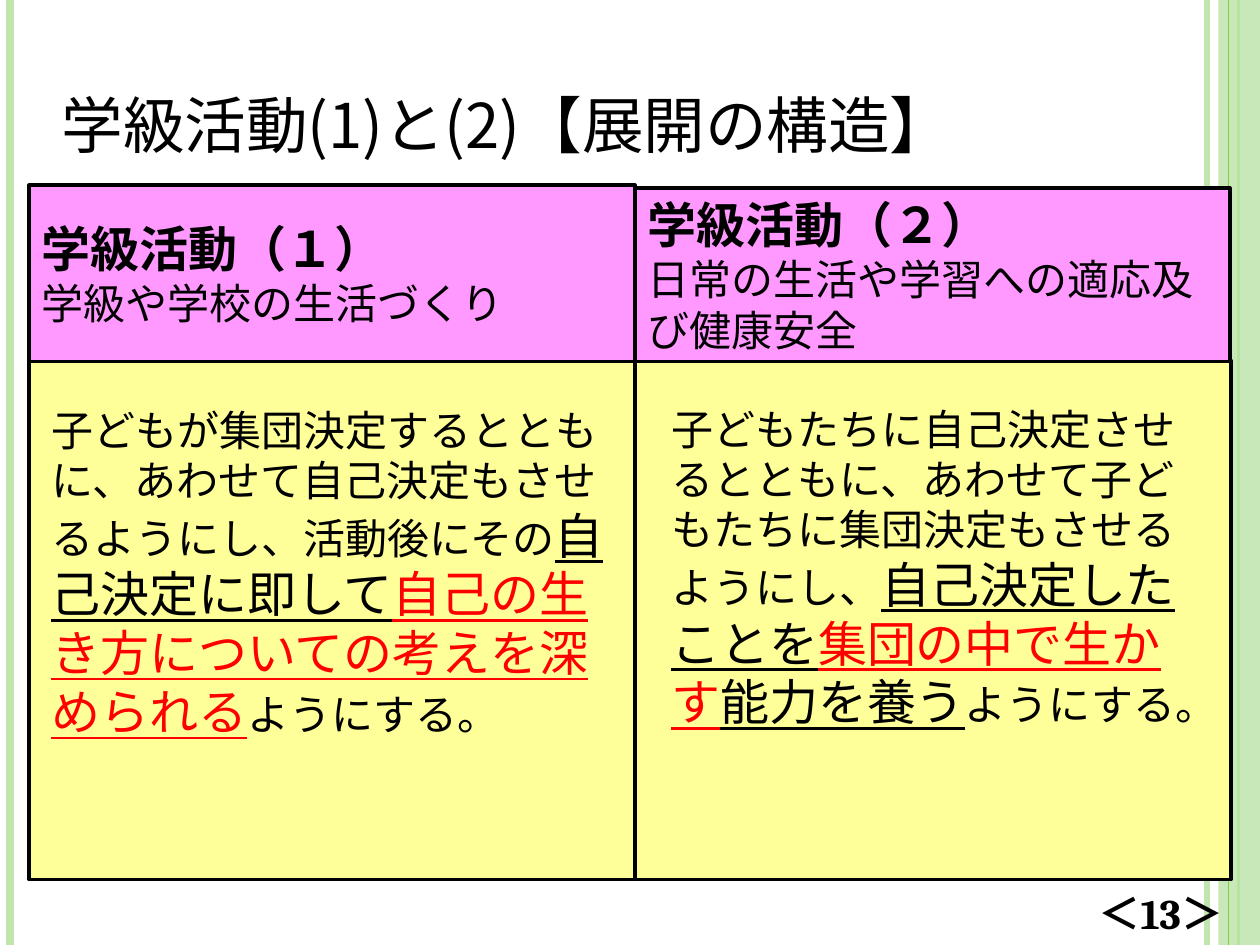
from lxml import etree
from pptx import Presentation
from pptx.dml.color import RGBColor
from pptx.enum.shapes import MSO_CONNECTOR, MSO_SHAPE
from pptx.enum.text import MSO_ANCHOR, PP_ALIGN
from pptx.oxml.ns import qn
from pptx.util import Inches, Pt

RECT = MSO_SHAPE.RECTANGLE
LINE = MSO_CONNECTOR.STRAIGHT
LEFT = PP_ALIGN.LEFT
TOP, MID, LOW = MSO_ANCHOR.TOP, MSO_ANCHOR.MIDDLE, MSO_ANCHOR.BOTTOM
SANS, SERIF = "Noto Sans CJK JP", "Cambria"
BLACK, RED, PINK, CREAM = "000000", "FF0000", "FF99FF", "FFFF99"
PALE, GREEN = "C0E5AF", "7FD13B"

PLAIN = dict(size=24)
KEY = dict(size=28, font=SANS, line=True)
HOT = dict(KEY, color=RED)
HEAD = dict(size=28, bold=True)

TITLE = [[("学級活動(1)と(2)【展開の構造】", dict(size=44, font=SANS, small=True))]]
PAGE = [[("＜13＞", dict(size=24, bold=True))]]
HEADS = [
    ((0.23, 1.47, 4.81, 1.4), "学級活動（１）", "学級や学校の生活づくり"),
    ((5.04, 1.49, 4.72, 1.38), "学級活動（２）", "日常の生活や学習への適応及び健康安全"),
]
BODIES = [
    ((0.31, 3.16, 4.6, 2.79), [
        ("子どもが集団決定するとともに、あわせて自己決定もさせるようにし、活動後にその", PLAIN),
        ("自己決定に即して", KEY),
        ("自己の生き方についての考えを深められる", HOT),
        ("ようにする。", PLAIN)]),
    ((5.23, 3.15, 4.45, 2.73), [
        ("子どもたちに自己決定させるとともに、あわせて子どもたちに集団決定もさせるようにし、", PLAIN),
        ("自己決定したことを", KEY),
        ("集団の中で生かす", HOT),
        ("能力を養う", KEY),
        ("ようにする。", PLAIN)]),
]
PANELS = [(5, 2.86, 4.77, 4.12), (0.23, 2.86, 4.81, 4.12)]
RULES = [(9.58, PALE, 3), (0.08, PALE, 4.5), (9.83, GREEN, 1.5)]
BAND = (9.67, 0, 0.33, 7.5)
EDGE = (9.75, GREEN, 0.75)

deck = Presentation()
deck.slide_width, deck.slide_height = Inches(10), Inches(7.5)
slide = deck.slides.add_slide(deck.slide_layouts[6])
shapes = slide.shapes


def rgb(code):
    return RGBColor.from_string(code)


def rule(x, color, width):
    bar = shapes.add_connector(LINE, Inches(x), 0, Inches(x), Inches(7.5))
    bar.line.color.rgb = rgb(color)
    bar.line.width = Pt(width)
    etree.SubElement(bar._element.spPr, qn("a:effectLst"))


def box(area, color, border=True):
    rect = shapes.add_shape(RECT, *map(Inches, area))
    rect.shadow.inherit = False
    rect.fill.solid()
    rect.fill.fore_color.rgb = rgb(color)
    if border:
        rect.line.color.rgb = rgb(BLACK)
        rect.line.width = Pt(2)
    else:
        rect.line.fill.background()
    return rect


def style(run, size, font=SERIF, color=BLACK, bold=False, line=False, small=False):
    face = run.font
    face.size, face.name, face.bold = Pt(size), font, bold
    face.underline = line
    face.color.rgb = rgb(color)
    props = run._r.get_or_add_rPr()
    props.set("lang", "ja-JP")
    if small:
        props.set("cap", "small")
    east = etree.Element(qn("a:ea"), typeface=SANS)
    props.find(qn("a:latin")).addnext(east)


def write(paras, shape=None, area=None, anchor=TOP):
    shape = shape or shapes.add_textbox(*map(Inches, area))
    frame = shape.text_frame
    frame.word_wrap = True
    frame.vertical_anchor = anchor
    for i, runs in enumerate(paras):
        para = frame.add_paragraph() if i else frame.paragraphs[0]
        para.alignment = LEFT
        for text, form in runs:
            run = para.add_run()
            run.text = text
            style(run, **form)


for mark in RULES:
    rule(*mark)
band = box(BAND, PALE, border=False)
tint = band._element.spPr.find(qn("a:solidFill"))[0]
etree.SubElement(tint, qn("a:alpha"), val="87000")
rule(*EDGE)

write(TITLE, area=(0.39, 0.25, 9.38, 1.1), anchor=LOW)
for area in PANELS:
    box(area, CREAM)
for area, name, note in HEADS:
    write([[(name, HEAD)], [(note, PLAIN)]], shape=box(area, PINK), anchor=MID)
for area, runs in BODIES:
    write([runs], area=area)
write(PAGE, area=(8.62, 6.99, 1.42, 0.5), anchor=MID)

deck.save("out.pptx")
